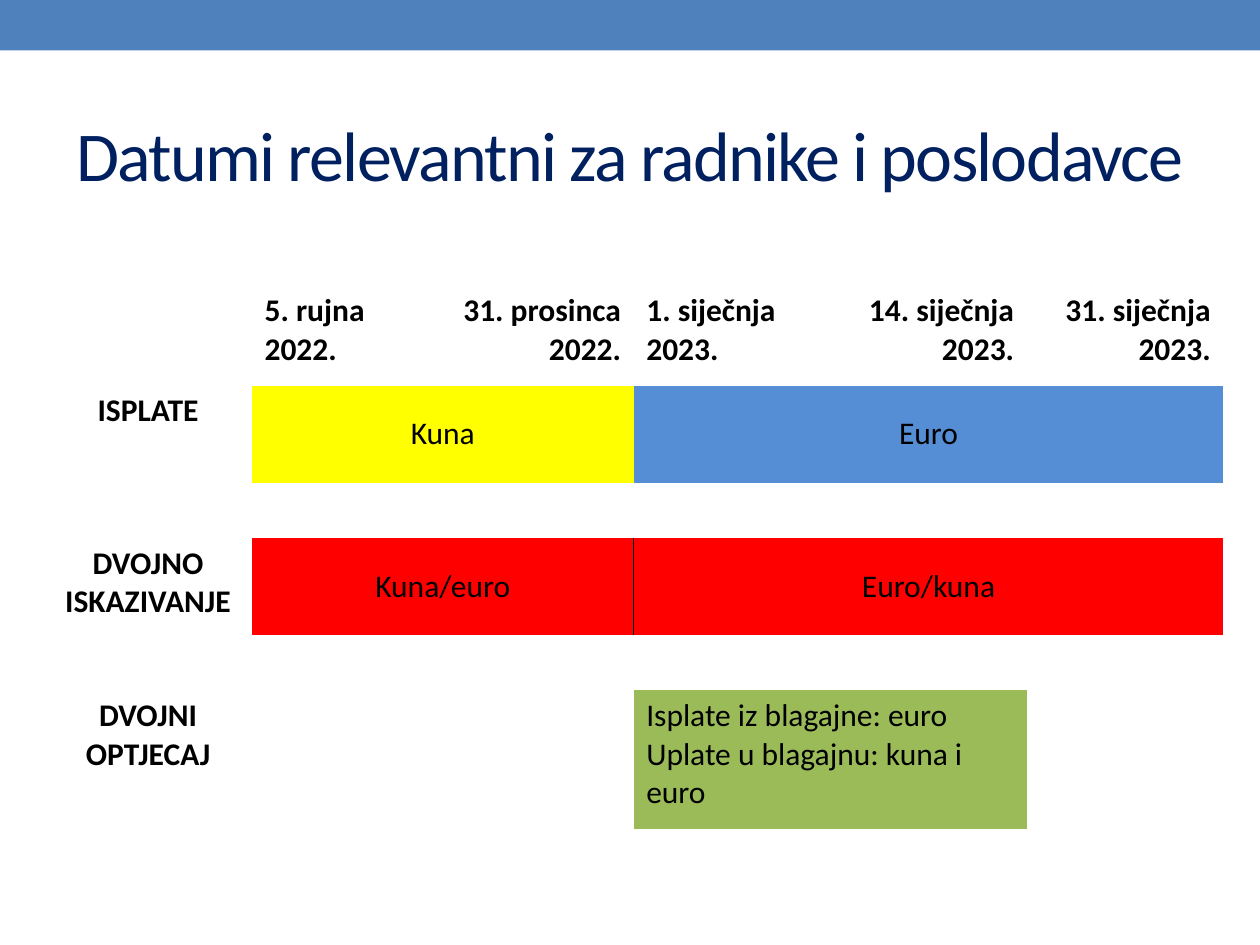
"""Build the slide of euro changeover dates for workers and employers."""
from lxml.etree import SubElement
from pptx import Presentation
from pptx.dml.color import RGBColor
from pptx.enum.shapes import MSO_SHAPE
from pptx.enum.text import MSO_ANCHOR, PP_ALIGN
from pptx.oxml import parse_xml
from pptx.oxml.ns import nsdecls, qn
from pptx.util import Inches, Pt

BLACK = RGBColor(0x00, 0x00, 0x00)
WHITE = RGBColor(0xFF, 0xFF, 0xFF)
NAVY = RGBColor(0x00, 0x20, 0x60)
BAND_BLUE = RGBColor(0x4F, 0x81, 0xBD)
EURO_BLUE = RGBColor(0x55, 0x8E, 0xD5)
KUNA_YELLOW = RGBColor(0xFF, 0xFF, 0x00)
DUAL_RED = RGBColor(0xFF, 0x00, 0x00)
CASH_GREEN = RGBColor(0x9B, 0xBB, 0x59)
LEFT, CENTER, RIGHT = PP_ALIGN.LEFT, PP_ALIGN.CENTER, PP_ALIGN.RIGHT
TOP, MIDDLE = MSO_ANCHOR.TOP, MSO_ANCHOR.MIDDLE
NO_STYLE = "{2D5ABB26-0587-4C30-8999-92F81FD0307C}"

COLUMNS = [1.65, 1.47] + [1.56] * 4
ROWS = [0.88, 0.77, 0.44, 0.77, 0.44, 1.1]
DATES = [
    ("5. rujna 2022.", LEFT),
    ("31. prosinca 2022.", RIGHT),
    ("1. siječnja 2023.", LEFT),
    ("14. siječnja 2023.", RIGHT),
    ("31. siječnja 2023.", RIGHT),
]
TOPICS = {1: "ISPLATE", 3: "DVOJNO ISKAZIVANJE", 5: "DVOJNI OPTJECAJ"}
CASH_RULES = ["Isplate iz blagajne: euro", "Uplate u blagajnu: kuna i euro"]
PERIODS = [
    (1, 1, 2, ["Kuna"], KUNA_YELLOW, CENTER, MIDDLE),
    (1, 3, 3, ["Euro"], EURO_BLUE, CENTER, MIDDLE),
    (2, 1, 2, [], WHITE, LEFT, TOP),
    (2, 3, 3, [], WHITE, LEFT, TOP),
    (3, 1, 2, ["Kuna/euro"], DUAL_RED, CENTER, MIDDLE),
    (3, 3, 3, ["Euro/kuna"], DUAL_RED, CENTER, MIDDLE),
    (4, 1, 5, [], None, LEFT, TOP),
    (5, 3, 2, CASH_RULES, CASH_GREEN, LEFT, TOP),
]


def write(frame, lines, align, size=18, bold=False, color=BLACK):
    for index, line in enumerate(lines):
        paragraph = frame.add_paragraph() if index else frame.paragraphs[0]
        paragraph.alignment = align
        run = paragraph.add_run()
        run.text = line
        run.font.name = "Calibri"
        run.font.size = Pt(size)
        run.font.bold = bold
        run.font.color.rgb = color


def draw_edge(cell, side):
    edge = parse_xml(f'<a:{side} {nsdecls("a")} w="{Pt(1)}"/>')
    fill = SubElement(edge, qn("a:solidFill"))
    SubElement(fill, qn("a:srgbClr")).set("val", str(BLACK))
    cell._tc.get_or_add_tcPr().insert(0, edge)


deck = Presentation()
deck.slide_width, deck.slide_height = Inches(10), Inches(7.5)
slide = deck.slides.add_slide(deck.slide_layouts[6])

band = slide.shapes.add_shape(MSO_SHAPE.RECTANGLE, 0, 0, deck.slide_width, Inches(0.4))
band.shadow.inherit = False
band.fill.solid()
band.fill.fore_color.rgb = BAND_BLUE
band.line.fill.background()

title = slide.shapes.add_textbox(Inches(0.5), Inches(0.58), Inches(9), Inches(1.28)).text_frame
title.word_wrap = True
title.vertical_anchor = MIDDLE
write(title, ["Datumi relevantni za radnike i poslodavce"], CENTER, 40, color=NAVY)
title.paragraphs[0].runs[0].font._element.set("spc", "-100")

timeline_frame = slide.shapes.add_table(
    len(ROWS), len(COLUMNS), Inches(0.35), Inches(2.18), Inches(sum(COLUMNS)), Inches(sum(ROWS)))
timeline = timeline_frame.table
timeline.first_row = timeline.horz_banding = False
timeline._tbl.tblPr.find(qn("a:tableStyleId")).text = NO_STYLE
for column, width in zip(timeline.columns, COLUMNS):
    column.width = Inches(width)
for row, height in zip(timeline.rows, ROWS):
    row.height = Inches(height)
for cell in timeline.iter_cells():
    cell.fill.background()

for column, (date, align) in enumerate(DATES, start=1):
    cell = timeline.cell(0, column)
    cell.vertical_anchor = MIDDLE
    write(cell.text_frame, [date], align, bold=True)

for row, topic in TOPICS.items():
    write(timeline.cell(row, 0).text_frame, [topic], CENTER, bold=True)

for row, column, span, lines, color, align, anchor in PERIODS:
    cell = timeline.cell(row, column)
    cell.merge(timeline.cell(row, column + span - 1))
    cell.vertical_anchor = anchor
    write(cell.text_frame, lines, align)
    if color is not None:
        cell.fill.solid()
        cell.fill.fore_color.rgb = color

draw_edge(timeline.cell(3, 1), "lnR")
draw_edge(timeline.cell(3, 3), "lnL")

deck.save("out.pptx")
